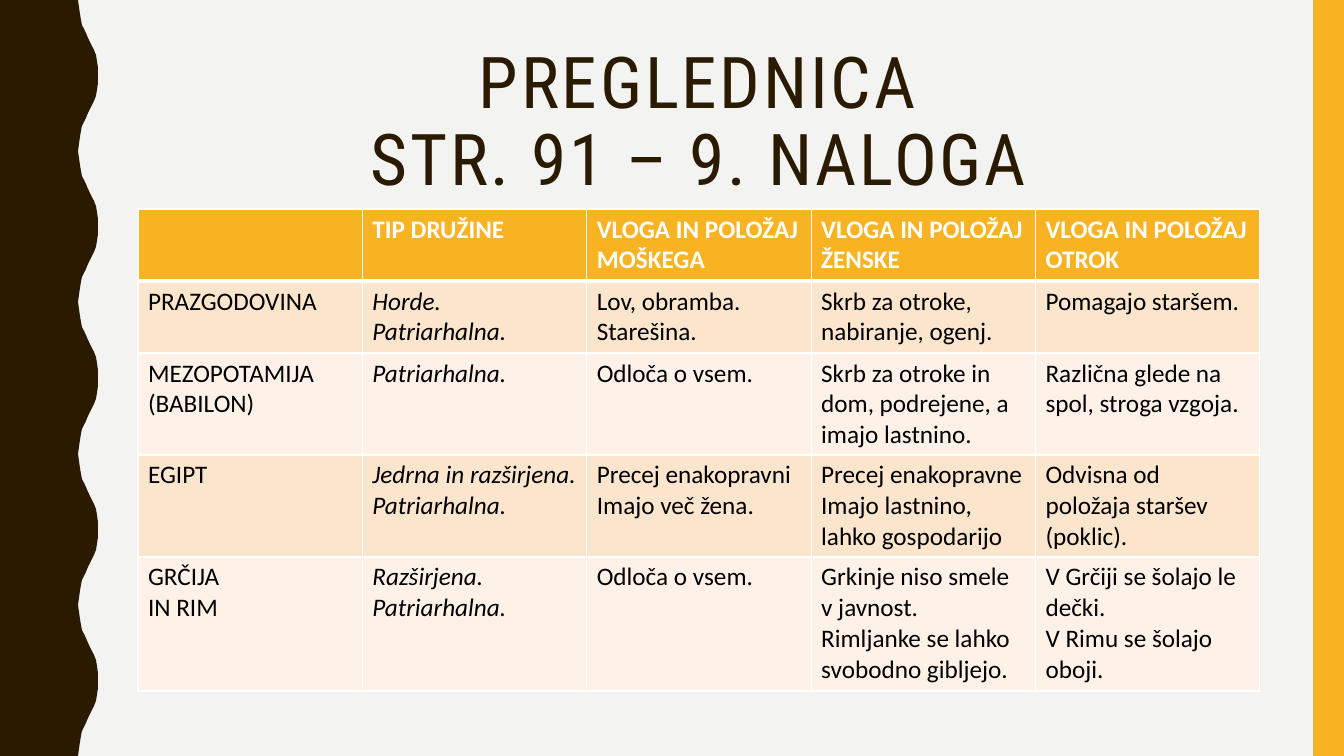
from pptx import Presentation
from pptx.dml.color import RGBColor
from pptx.enum.shapes import MSO_SHAPE as Shape
from pptx.enum.text import MSO_ANCHOR as Anchor, PP_ALIGN as Align
from pptx.oxml import parse_xml
from pptx.oxml.ns import nsdecls
from pptx.util import Pt

PX = 914400 / 100.8
WIDTH, HEIGHT = 1344, 756
BROWN, AMBER, WHITE, BLACK = "2A1A00", "F8B323", "FFFFFF", "000000"
BANDS = ["FCE5CD", "FEF2E8"]


def px(*lengths):
    return [round(length * PX) for length in lengths]


def color(hex_code):
    return RGBColor.from_string(hex_code)


deck = Presentation()
deck.slide_width, deck.slide_height = px(WIDTH, HEIGHT)
page = deck.slides.add_slide(deck.slide_layouts[6])
page.background.fill.solid()
page.background.fill.fore_color.rgb = color("F3F3F2")

# Wavy left edge: five equal waves, each a bulge mirrored about its crest
WAVES = 5
wave_height = HEIGHT / WAVES
bulge = [(78, 0), (79, 7), (80, 14), (81, 20), (82, 25), (84, 29), (86, 33), (88, 38),
         (90, 42), (92, 46), (94, 50), (96, 55), (97, 61), (98, 68), (98, 76)]
wave = bulge + [(x, wave_height - y) for x, y in reversed(bulge[:-1])]
edge = [(x, round(number * wave_height + y)) for number in range(WAVES) for x, y in wave]
builder = page.shapes.build_freeform(0, 0, scale=PX)
builder.add_line_segments(edge + [(0, HEIGHT)], close=True)
wavy_edge = builder.convert_to_shape()
right_bar = page.shapes.add_shape(Shape.RECTANGLE, *px(1313, 0, 31, HEIGHT))
for shape, fill in [(wavy_edge, BROWN), (right_bar, AMBER)]:
    shape.shadow.inherit = False
    shape.fill.solid()
    shape.fill.fore_color.rgb = color(fill)
    shape.line.fill.background()

# Title
title = page.shapes.add_textbox(*px(138, 42, 1122, 164)).text_frame
title.word_wrap = True
title.vertical_anchor = Anchor.MIDDLE
title.text = "PREGLEDNICA\vSTR. 91 – 9. NALOGA"
para = title.paragraphs[0]
para.alignment = Align.CENTER
para.line_spacing = 0.9
for span in para.runs:
    span.font.name = "Roboto Condensed"
    span.font.size = Pt(51)
    span.font.color.rgb = color(BROWN)
    span.font._element.set("spc", "200")

# Table of family types; \v breaks a line, \n starts a paragraph
rows = [
    ["", "TIP DRUŽINE", "VLOGA IN POLOŽAJ MOŠKEGA", "VLOGA IN POLOŽAJ ŽENSKE",
     "VLOGA IN POLOŽAJ OTROK"],
    ["PRAZGODOVINA", "Horde.\vPatriarhalna.", "Lov, obramba.\vStarešina.",
     "Skrb za otroke, nabiranje, ogenj.", "Pomagajo staršem."],
    ["MEZOPOTAMIJA\v(BABILON)", "Patriarhalna.", "Odloča o vsem.",
     "Skrb za otroke in dom, podrejene, a imajo lastnino.",
     "Različna glede na spol, stroga vzgoja."],
    ["EGIPT", "Jedrna in razširjena.\vPatriarhalna.", "Precej enakopravni\vImajo več žena.",
     "Precej enakopravne\vImajo lastnino, lahko gospodarijo",
     "Odvisna od položaja staršev (poklic)."],
    ["GRČIJA\vIN RIM", "Razširjena.\vPatriarhalna.", "Odloča o vsem.",
     "Grkinje niso smele v javnost.\nRimljanke se lahko svobodno gibljejo.",
     "V Grčiji se šolajo le dečki.\vV Rimu se šolajo oboji."],
]
row_heights = px(72, 72, 102, 102, 134)
table = page.shapes.add_table(len(rows), len(rows[0]), *px(138, 209, 1122, 482)).table
for row, height in zip(table.rows, row_heights):
    row.height = height
for row_number, texts in enumerate(rows):
    header = row_number == 0
    borders = {"lnL": 1, "lnR": 1, "lnT": 3 if row_number == 1 else 1, "lnB": 3 if header else 1}
    for column_number, text in enumerate(texts):
        cell = table.cell(row_number, column_number)
        cell.text = text
        cell.fill.solid()
        cell.fill.fore_color.rgb = color(AMBER if header else BANDS[(row_number - 1) % 2])
        for para in cell.text_frame.paragraphs:
            for span in para.runs:
                span.font.name = "Calibri"
                span.font.size = Pt(18)
                span.font.bold = header
                span.font.italic = column_number == 1 and not header
                span.font.color.rgb = color(WHITE if header else BLACK)
        properties = cell._tc.get_or_add_tcPr()
        for position, (side, points) in enumerate(borders.items()):
            properties.insert(position, parse_xml(
                f'<a:{side} {nsdecls("a")} w="{Pt(points)}"><a:solidFill>'
                f'<a:srgbClr val="{WHITE}"/></a:solidFill></a:{side}>'))

deck.save("out.pptx")
